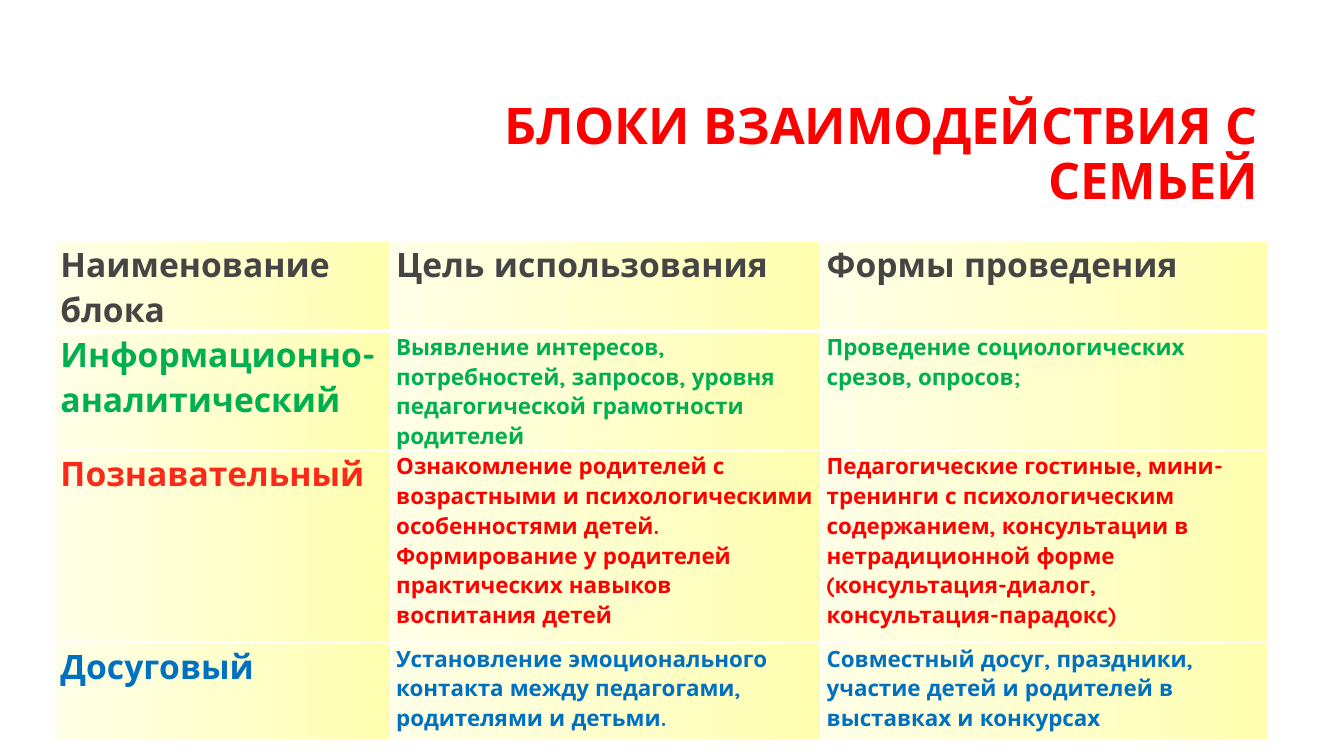
from lxml import etree
from pptx import Presentation
from pptx.dml.color import RGBColor
from pptx.enum.text import MSO_ANCHOR, MSO_AUTO_SIZE, PP_ALIGN
from pptx.oxml import parse_xml
from pptx.oxml.ns import nsdecls
from pptx.util import Inches, Pt

# Content
FONT = "Quicksand"
TITLE = "БЛОКИ ВЗАИМОДЕЙСТВИЯ С СЕМЬЕЙ"
HEADER = ("Наименование блока", "Цель использования", "Формы проведения")
HEADER_COLOR = "454545"
BLOCKS = [  # name, purpose, forms, name colour, text colour
    ("Информационно-аналитический",
     "Выявление интересов, потребностей, запросов, уровня педагогической "
     "грамотности родителей",
     "Проведение социологических срезов, опросов;",
     "00B050", "00B050"),
    ("Познавательный",
     "Ознакомление родителей с возрастными и психологическими особенностями "
     "детей. Формирование у родителей практических навыков воспитания детей",
     "Педагогические гостиные, мини-тренинги с психологическим содержанием, "
     "консультации в нетрадиционной форме (консультация-диалог, "
     "консультация-парадокс)",
     "FB2919", "FF0000"),
    ("Досуговый",
     "Установление эмоционального контакта между педагогами, родителями и детьми.",
     "Совместный досуг, праздники, участие детей и родителей в выставках и конкурсах",
     "0070C0", "0070C0"),
]
COLUMN_WIDTHS = (3.33, 4.27, 4.43)
ROW_HEIGHTS = (0.74, 1.11, 1.91, 0.96)
GRADIENT = ((0, "FFFFAF"), (50, "FFFFCE"), (100, "FFFFE7"))
BORDER_COLOR = "FFFFFF"


def color(value):
    return RGBColor.from_string(value)


def add_text(para, text, size, text_color):
    span = para.add_run()
    span.text = text
    span.font.name = FONT
    span.font.size = Pt(size)
    span.font.bold = True
    span.font.color.rgb = color(text_color)


def style_cell(cell, bottom_width):
    """Give the cell white borders, then the yellow gradient."""
    properties = cell._tc.get_or_add_tcPr()
    for side, width in (("L", 1), ("R", 1), ("T", 1), ("B", bottom_width)):
        properties.append(parse_xml(
            f'<a:ln{side} {nsdecls("a")} w="{Pt(width)}"><a:solidFill>'
            f'<a:srgbClr val="{BORDER_COLOR}"/></a:solidFill></a:ln{side}>'))
    stops = "".join(
        f'<a:gs pos="{position * 1000}"><a:srgbClr val="{value}"/></a:gs>'
        for position, value in GRADIENT)
    properties.append(parse_xml(
        f'<a:gradFill {nsdecls("a")} rotWithShape="1"><a:gsLst>{stops}</a:gsLst>'
        f'<a:lin ang="{180 * 60000}" scaled="0"/></a:gradFill>'))


def fill_cell(cell, text, size, text_color, bottom_width):
    cell.margin_left = cell.margin_right = Inches(0.06)
    cell.margin_top = cell.margin_bottom = 0
    para = cell.text_frame.paragraphs[0]
    para.line_spacing = 1.07
    para.space_after = Pt(8)
    add_text(para, text, size, text_color)
    style_cell(cell, bottom_width)


deck = Presentation()
deck.slide_width, deck.slide_height = Inches(13.33), Inches(7.5)
page = deck.slides.add_slide(deck.slide_layouts[5])

# Title
title = page.shapes.title
title.left, title.top = Inches(2.81), Inches(0.83)
title.width, title.height = Inches(9.77), Inches(1.43)
frame = title.text_frame
frame.word_wrap = True
frame.auto_size = MSO_AUTO_SIZE.NONE
frame.vertical_anchor = MSO_ANCHOR.MIDDLE
heading = frame.paragraphs[0]
heading.alignment = PP_ALIGN.RIGHT
heading.line_spacing = 0.9
add_text(heading, TITLE, 36, "FF0000")

# Table grid
table = page.shapes.add_table(
    len(ROW_HEIGHTS), len(COLUMN_WIDTHS), Inches(0.54), Inches(2.39),
    Inches(sum(COLUMN_WIDTHS)), Inches(sum(ROW_HEIGHTS))).table
table.horz_banding = False
for column, width in zip(table.columns, COLUMN_WIDTHS):
    column.width = Inches(width)
for row, height in zip(table.rows, ROW_HEIGHTS):
    row.height = Inches(height)

# Header row, then one row per block
for index, text in enumerate(HEADER):
    fill_cell(table.cell(0, index), text, 24, HEADER_COLOR, 3)
for number, (name, purpose, forms, name_color, text_color) in enumerate(BLOCKS, 1):
    fill_cell(table.cell(number, 0), name, 24, name_color, 1)
    for index, text in enumerate((purpose, forms), 1):
        fill_cell(table.cell(number, index), text, 16, text_color, 1)

deck.save("out.pptx")
